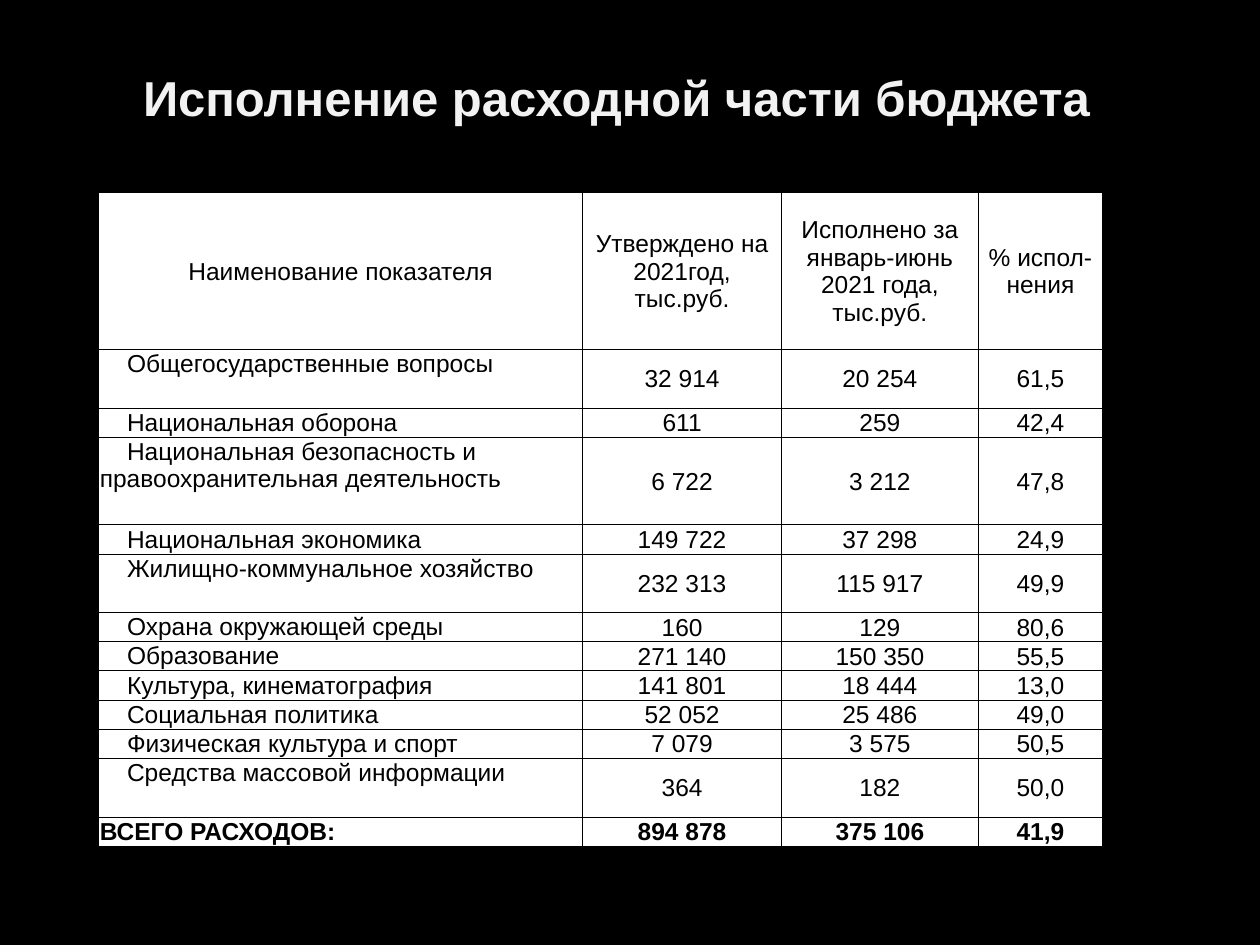
import pptx
import pptx.dml.color
import pptx.enum.text
import pptx.oxml
import pptx.oxml.ns
import pptx.util

Pt = pptx.util.Pt
ALIGN = pptx.enum.text.PP_ALIGN
ANCHOR = pptx.enum.text.MSO_ANCHOR

TITLE = "Исполнение расходной части бюджета"
HEADER = ("Наименование показателя", "Утверждено на 2021год, тыс.руб.",
          "Исполнено за январь-июнь 2021 года, тыс.руб.", "% испол-нения")
# name, approved, executed, percent, row height in text lines
EXPENSES = [
    ("Общегосударственные вопросы", "32 914", "20 254", "61,5", 2),
    ("Национальная оборона", "611", "259", "42,4", 1),
    ("Национальная безопасность и правоохранительная деятельность",
     "6 722", "3 212", "47,8", 3),
    ("Национальная экономика", "149 722", "37 298", "24,9", 1),
    ("Жилищно-коммунальное хозяйство", "232 313", "115 917", "49,9", 2),
    ("Охрана окружающей среды", "160", "129", "80,6", 1),
    ("Образование", "271 140", "150 350", "55,5", 1),
    ("Культура, кинематография", "141 801", "18 444", "13,0", 1),
    ("Социальная политика", "52 052", "25 486", "49,0", 1),
    ("Физическая культура и спорт", "7 079", "3 575", "50,5", 1),
    ("Средства массовой информации", "364", "182", "50,0", 2),
]
TOTAL = ("ВСЕГО РАСХОДОВ:", "894 878", "375 106", "41,9")

COLUMN_WIDTHS = (276.5, 113.8, 112.3, 71.2)
HEADER_HEIGHT = 89.5
LINE_HEIGHT = 16.7
NAME_INDENT = 15.6


def rgb(value):
    return pptx.dml.color.RGBColor.from_string(value)


def style_font(p, size, color, bold):
    p.font.name = "Arial"
    p.font.size = Pt(size)
    p.font.color.rgb = rgb(color)
    p.font.bold = bold


def add_borders(cell, color="000000", width=0.5):
    tcPr = cell._tc.get_or_add_tcPr()
    for i, side in enumerate(("lnL", "lnR", "lnT", "lnB")):
        tcPr.insert(i, pptx.oxml.parse_xml(
            f'<a:{side} {pptx.oxml.ns.nsdecls("a")} w="{Pt(width)}">'
            f'<a:solidFill><a:srgbClr val="{color}"/></a:solidFill></a:{side}>'))


def fill_cell(cell, text, anchor, align, bold=False, indent=0):
    cell.fill.solid()
    cell.fill.fore_color.rgb = rgb("FFFFFF")
    add_borders(cell)
    cell.margin_left = cell.margin_right = cell.margin_top = Pt(0.6)
    cell.margin_bottom = 0
    cell.vertical_anchor = anchor
    cell.text = text
    p = cell.text_frame.paragraphs[0]
    p.alignment = align
    style_font(p, 14, "000000", bold)
    if indent:
        pPr = p._p.get_or_add_pPr()
        pPr.set("marL", "0")
        pPr.set("indent", str(Pt(indent)))


prs = pptx.Presentation()
prs.slide_width, prs.slide_height = Pt(720), Pt(540)
s = prs.slides.add_slide(prs.slide_layouts[5])
s.background.fill.solid()
s.background.fill.fore_color.rgb = rgb("000000")

title = s.shapes.title
title.left, title.top, title.width, title.height = Pt(36), Pt(21), Pt(648), Pt(69)
tf = title.text_frame
tf.text = TITLE
tf.vertical_anchor = ANCHOR.MIDDLE
tf.margin_right = Pt(22.8)
p = tf.paragraphs[0]
p.alignment = ALIGN.CENTER
style_font(p, 28, "F2F2F2", True)

rows = [HEADER] + [row[:4] for row in EXPENSES] + [TOTAL]
heights = [HEADER_HEIGHT] + [LINE_HEIGHT * row[4] for row in EXPENSES] + [LINE_HEIGHT]
table = s.shapes.add_table(len(rows), len(HEADER), Pt(56.4), Pt(110.2),
                           Pt(sum(COLUMN_WIDTHS)), Pt(sum(heights))).table
for column, width in zip(table.columns, COLUMN_WIDTHS):
    column.width = Pt(width)

for r, (row, height) in enumerate(zip(rows, heights)):
    table.rows[r].height = Pt(height)
    is_total = row is TOTAL
    for c, text in enumerate(row):
        cell = table.cell(r, c)
        if c or row is HEADER:
            fill_cell(cell, text, ANCHOR.MIDDLE, ALIGN.CENTER, is_total)
        elif is_total:
            fill_cell(cell, text, ANCHOR.BOTTOM, ALIGN.LEFT, True)
        else:
            fill_cell(cell, text, ANCHOR.TOP, ALIGN.LEFT, indent=NAME_INDENT)

prs.save("out.pptx")
